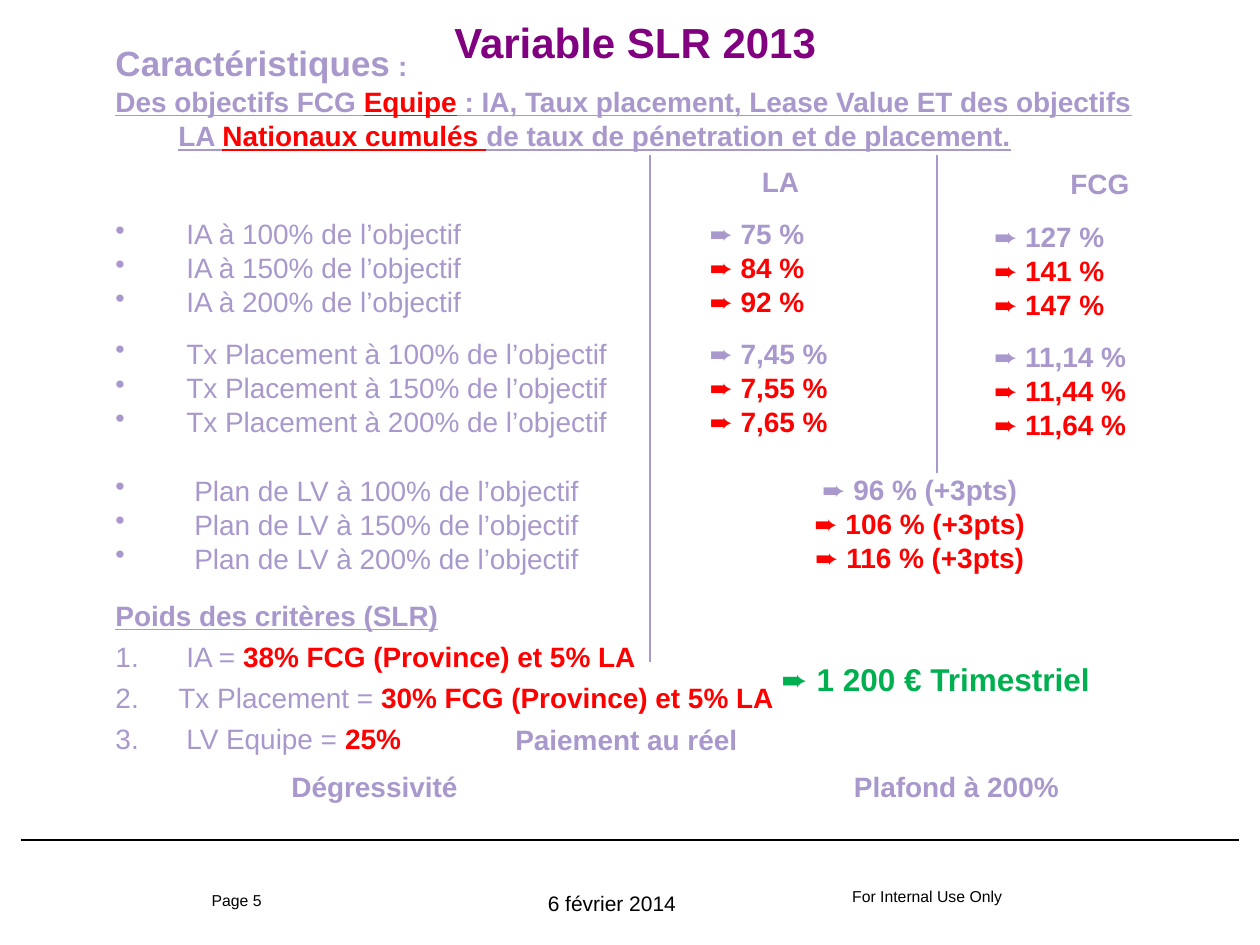
"""Build the Variable SLR 2013 slide."""
from dataclasses import dataclass

import pptx
import pptx.dml.color
import pptx.enum.shapes
import pptx.enum.text
import pptx.oxml.ns
import pptx.util
from lxml import etree

Pt = pptx.util.Pt
ALIGN = pptx.enum.text.PP_ALIGN


@dataclass(frozen=True)
class Theme:
    font: str = "Arial"
    lilac: str = "A998CC"
    red: str = "FF0000"
    purple: str = "800080"
    green: str = "00B050"
    black: str = "000000"
    title: float = 24
    heading: float = 20
    amount: float = 18
    body: float = 16
    date: float = 12
    footer: float = 9
    pitch: float = 19.5
    group_gaps: tuple[float, ...] = (36.5, 10, 19.5)


THEME = Theme()


@dataclass(frozen=True)
class Run:
    text: str
    color: str = THEME.lilac
    bold: bool = True
    underline: bool = False
    size: float = THEME.body


@dataclass(frozen=True)
class Para:
    runs: tuple[Run, ...]
    before: float = 0
    pitch: float | None = None
    margin: float = 0
    hanging: float = 0
    bullet: str = ""
    align: ALIGN = ALIGN.LEFT


@dataclass(frozen=True)
class Box:
    left: float
    top: float
    width: float
    height: float
    paras: tuple[Para, ...]


@dataclass(frozen=True)
class Rule:
    start: tuple[float, float]
    end: tuple[float, float]
    color: str
    width: float


def add_bullet(p, bullet: str) -> None:
    pPr = p._p.get_or_add_pPr()
    kind, name, value = (("buAutoNum", "type", "arabicPeriod") if bullet == "1."
                         else ("buChar", "char", bullet))
    etree.SubElement(pPr, pptx.oxml.ns.qn(f"a:{kind}")).set(name, value)


def fill_para(p, para: Para) -> None:
    p.alignment = para.align
    p.space_before = Pt(para.before)
    if para.pitch:
        p.line_spacing = Pt(para.pitch)
    pPr = p._p.get_or_add_pPr()
    pPr.set("marL", str(Pt(para.margin)))
    pPr.set("indent", str(-Pt(para.hanging)))
    if para.bullet:
        add_bullet(p, para.bullet)
    for run in para.runs:
        r = p.add_run()
        r.text = run.text
        r.font.name = THEME.font
        r.font.size = Pt(run.size)
        r.font.bold = run.bold
        r.font.underline = run.underline
        r.font.color.rgb = pptx.dml.color.RGBColor.from_string(run.color)


def draw_box(s, box: Box) -> None:
    sp = s.shapes.add_textbox(Pt(box.left), Pt(box.top), Pt(box.width), Pt(box.height))
    tf = sp.text_frame
    tf.word_wrap = True
    tf.margin_left = tf.margin_right = tf.margin_top = tf.margin_bottom = 0
    for i, para in enumerate(box.paras):
        fill_para(tf.add_paragraph() if i else tf.paragraphs[0], para)


def draw_rule(s, rule: Rule) -> None:
    points = [Pt(v) for v in (*rule.start, *rule.end)]
    line = s.shapes.add_connector(pptx.enum.shapes.MSO_CONNECTOR.STRAIGHT, *points)
    line.line.color.rgb = pptx.dml.color.RGBColor.from_string(rule.color)
    line.line.width = Pt(rule.width)
    etree.SubElement(line._element.spPr, pptx.oxml.ns.qn("a:effectLst"))


def label(left: float, top: float, width: float, run: Run, align: ALIGN = ALIGN.LEFT) -> Box:
    return Box(left, top, width, run.size * 1.2, (Para((run,), align=align),))


def column(left: float, top: float, width: float, groups: list[list[str]],
           align: ALIGN = ALIGN.LEFT) -> Box:
    paras = []
    for g, values in enumerate(groups):
        for i, value in enumerate(values):
            color = THEME.red if i else THEME.lilac
            before = THEME.group_gaps[1] if g and not i else 0
            paras.append(Para((Run("➨ ", color, False), Run(value, color)),
                              before, THEME.pitch, align=align))
    height = THEME.pitch * len(paras) + THEME.group_gaps[1] * (len(groups) - 1)
    return Box(left, top, width, height, tuple(paras))


def body() -> Box:
    t = THEME
    paras = [
        Para((Run("Caractéristiques", size=t.heading), Run(" :")), pitch=24),
        Para((Run("Des objectifs FCG ", underline=True),
              Run("Equipe", t.red, underline=True),
              Run(" : IA, Taux placement, Lease Value ET des objectifs LA ", underline=True),
              Run("Nationaux cumulés ", t.red, underline=True),
              Run("de taux de pénetration et de placement.", underline=True)),
             pitch=t.pitch, margin=36, hanging=36),
    ]
    criteria = (("IA", 40.5), ("Tx Placement", 40.5), ("Plan de LV", 45))
    for (name, margin), gap in zip(criteria, t.group_gaps):
        for level in (100, 150, 200):
            paras.append(Para((Run(f"{name} à {level}% de l’objectif", bold=False),),
                              gap if level == 100 else 0, t.pitch, margin, margin, "•"))
    paras.append(Para((Run("Poids des critères (SLR)", underline=True),), 13, t.pitch))
    weights = (("IA = ", "38% FCG (Province) et 5% LA", 40.5),
               ("Tx Placement = ", "30% FCG (Province) et 5% LA", 36),
               ("LV Equipe = ", "25%", 40.5))
    for name, weight, margin in weights:
        paras.append(Para((Run(name, bold=False), Run(weight, t.red)),
                          4, t.pitch, margin, margin, "1."))
    return Box(66, 24, 591, 410, tuple(paras))


def main() -> None:
    t = THEME
    prs = pptx.Presentation()
    prs.slide_width, prs.slide_height = Pt(720), Pt(540)
    s = prs.slides.add_slide(prs.slide_layouts[6])
    rules = (Rule((12, 480), (708, 480), t.black, 1),
             Rule((535.5, 88.5), (535.5, 270), t.lilac, 0.75),
             Rule((371.5, 88.5), (371.5, 378), t.lilac, 0.75))
    boxes = (
        column(568, 125, 140, [["127 %", "141 %", "147 %"],
                               ["11,14 %", "11,44 %", "11,64 %"]]),
        body(),
        column(405.5, 123.5, 125, [["75 %", "84 %", "92 %"],
                                   ["7,45 %", "7,55 %", "7,65 %"]]),
        column(425.5, 269.5, 200, [["96 % (+3pts)", "106 % (+3pts)", "116 % (+3pts)"]],
               ALIGN.CENTER),
        label(77, 9.5, 572, Run("Variable SLR 2013", t.purple, size=t.title), ALIGN.CENTER),
        Box(446.5, 377, 195, 22, (Para((Run("➨ ", t.green, False, size=t.amount),
                                        Run("1 200 € Trimestriel", t.green, size=t.amount))),)),
        label(392, 94, 108, Run("LA"), ALIGN.CENTER),
        label(553, 95, 151, Run("FCG"), ALIGN.CENTER),
        label(294.5, 413, 140, Run("Paiement au réel")),
        label(166.5, 440, 120, Run("Dégressivité")),
        label(488, 440, 150, Run("Plafond à 200%")),
        label(121, 509, 124, Run("Page 5", t.black, False, size=t.footer)),
        label(487, 507, 95, Run("For Internal Use Only", t.black, False, size=t.footer)),
        label(313, 509, 118, Run("6 février 2014", t.black, False, size=t.date)),
    )
    for rule in rules:
        draw_rule(s, rule)
    for box in boxes:
        draw_box(s, box)
    prs.save("out.pptx")


if __name__ == "__main__":
    main()
